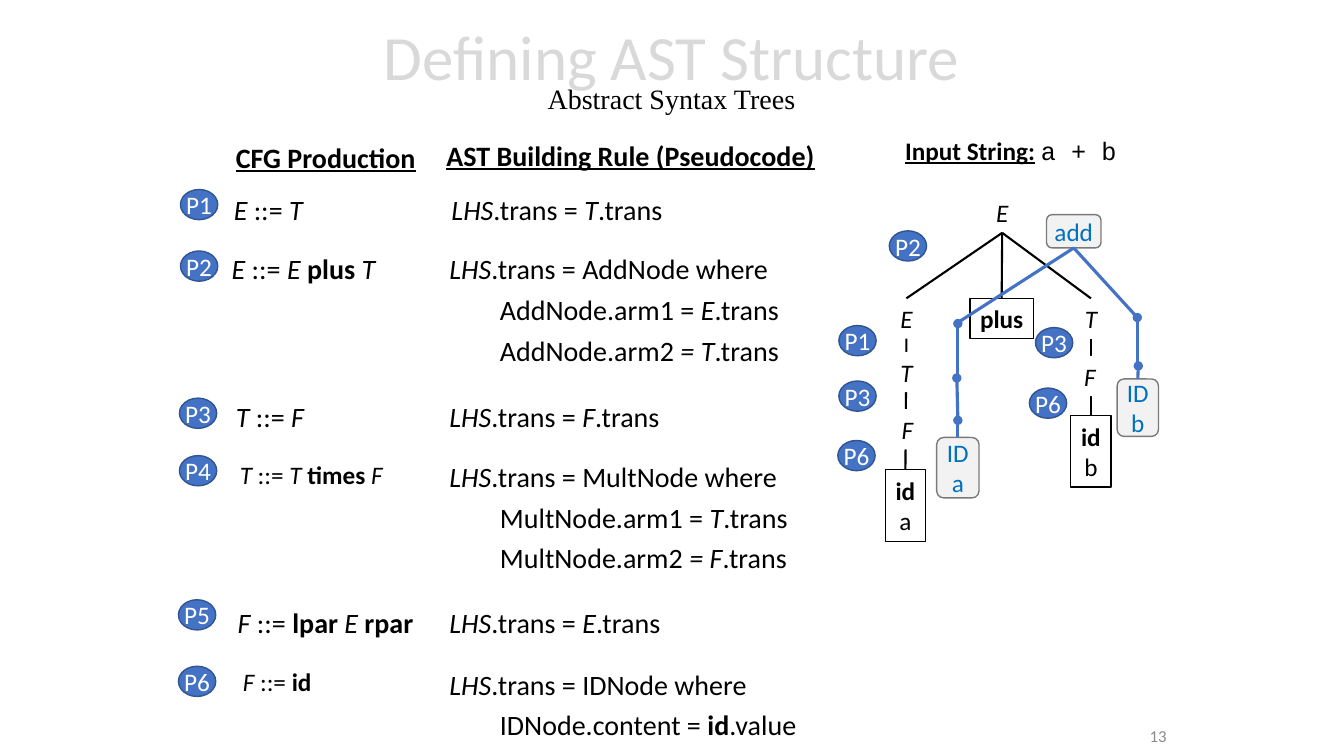
"""Build the slide that pairs grammar productions with AST building rules."""
from dataclasses import dataclass
from typing import Optional

from lxml.etree import SubElement
from pptx import Presentation
from pptx.dml.color import RGBColor
from pptx.enum.shapes import MSO_CONNECTOR as Connector, MSO_SHAPE as Preset
from pptx.enum.text import MSO_ANCHOR as Anchor, MSO_AUTO_SIZE as AutoSize, PP_ALIGN as Align
from pptx.oxml.ns import qn
from pptx.util import Inches, Pt

BLACK, WHITE, BLUE = "000000", "FFFFFF", "4472C4"
TOP, BOTTOM = 0, 2
MARKS = {
    "_": {"italic": True},
    "*": {"bold": True},
    "~": {"bold": True, "underline": True},
    "`": {"name": "Courier New"},
}


@dataclass
class Label:
    text: str
    left: float
    top: float
    width: float
    height: float = 0.51
    size: int = 20
    spacing: Optional[int] = 32
    color: str = BLACK
    align: Align = Align.LEFT
    anchor: Anchor = Anchor.TOP


@dataclass
class Style:
    preset: Preset
    fill: str
    line: Optional[str]
    color: str


@dataclass
class Node:
    text: str
    left: float
    top: float
    width: float = 0.32
    height: float = 0.4


@dataclass
class Edge:
    start: tuple
    end: tuple
    source: Optional[str] = None
    target: Optional[str] = None


SYMBOL = Style(Preset.RECTANGLE, WHITE, None, BLACK)
TOKEN = Style(Preset.RECTANGLE, WHITE, BLACK, BLACK)
TREE_NODE = Style(Preset.ROUNDED_RECTANGLE, "F2F2F2", "7A7A7A", "0070C0")
BADGE = Style(Preset.OVAL, BLUE, "325491", WHITE)

LABELS = [
    Label("~CFG Production", 2.24, 1.23, 2.2),
    Label("~AST Building Rule (Pseudocode)", 4.33, 1.21, 4),
    Label("~Input String:| |`a + b", 8.88, 1.29, 2.4, 0.4, 18, None),
    Label("_E| ::= |_T", 2.22, 1.75, 2.22),
    Label("_E |::= |_E |*plus |_T", 2.2, 2.38, 1.84, 0.48, spacing=29),
    Label("_T| ::= |_F", 2.24, 3.8, 2.22),
    Label("_T| ::= |_T |*times |_F", 2.28, 4.51, 1.7, 0.4, 18, None),
    Label("_F| ::= |*lpar |_E |*rpar", 2.26, 5.85, 2.4),
    Label("_F| ::= |*id", 2.31, 6.56, 1.2, 0.4, 18, None),
    Label("_LHS|.trans = |_T|.trans", 4.38, 1.75, 2.6),
    Label("_LHS|.trans = AddNode where\n\tAddNode.arm1 = |_E|.trans\n"
          "\tAddNode.arm2|_ = T|.trans", 4.36, 2.38, 3.56, 1.29, spacing=29),
    Label("_LHS|.trans = |_F|.trans", 4.36, 3.8, 2.6),
    Label("_LHS|.trans = MultNode where\n\tMultNode.arm1 = |_T|.trans\n"
          "\tMultNode.arm2|_ = F|.trans", 4.36, 4.44, 3.56, 1.29, spacing=29),
    Label("_LHS|.trans = |_E|.trans", 4.36, 5.85, 2.6),
    Label("_LHS|.trans = IDNode where\n\tIDNode.content = |*id|.value",
          4.36, 6.5, 3.7, 0.89, spacing=29),
    Label("13", 9.34, 7.1, 2.33, 0.4, 12, None, "8C8C8C", Align.RIGHT, Anchor.MIDDLE),
]
OUTER_SYMBOLS = {
    "root": Node("_E", 9.78, 1.91),
    "left": Node("_E", 8.83, 2.96),
    "right": Node("_T", 10.66, 2.96),
}
TOKENS = {
    "id a": Node("*id\na", 8.78, 4.66, 0.4, 0.71),
    "plus": Node("*plus", 9.62, 2.96, 0.63),
    "id b": Node("*id\nb", 10.62, 4.12, 0.4, 0.71),
}
INNER_SYMBOLS = {
    "left T": Node("_T", 8.83, 3.49),
    "left F": Node("_F", 8.84, 4.06),
    "right F": Node("_F", 10.65, 3.53),
}
AST_NODES = {
    "add": Node("add", 10.38, 2.13, 0.54, 0.33),
    "ID a": Node("ID\na", 9.29, 4.34, 0.42, 0.6),
    "ID b": Node("ID\nb", 11.08, 3.76, 0.41, 0.57),
}
PARSE_EDGES = [
    Edge((9.94, 2.31), (8.99, 2.96), "root", "left"),
    Edge((9.94, 2.31), (9.94, 2.96), "root", "plus"),
    Edge((9.94, 2.31), (10.82, 2.96), "root", "right"),
    Edge((8.99, 3.36), (8.98, 4.66), "left", "id a"),
    Edge((10.82, 3.36), (10.82, 4.12), "right", "id b"),
]
AST_EDGES = [
    Edge((11.28, 3.15), (10.65, 2.46), target="add"),
    Edge((9.5, 3.2), (10.65, 2.46), target="add"),
]
TRANSLATION_STEPS = [
    Edge((9.5, 4.34), (9.5, 4.17), "ID a"),
    Edge((9.5, 4.15), (9.49, 3.75)),
    Edge((9.5, 3.72), (9.5, 3.21)),
    Edge((11.29, 3.76), (11.29, 3.63), "ID b"),
    Edge((11.28, 3.63), (11.28, 3.15)),
]
BADGES = [
    ("P1", 1.79, 1.88), ("P2", 1.79, 2.49), ("P3", 1.78, 3.95),
    ("P4", 1.78, 4.52), ("P5", 1.77, 5.95), ("P6", 1.77, 6.61),
    ("P2", 8.82, 2.29), ("P1", 8.32, 3.23), ("P3", 8.32, 3.78),
    ("P6", 8.31, 4.37), ("P3", 10.27, 3.25), ("P6", 10.21, 3.85),
]


def rgb(value: str) -> RGBColor:
    return RGBColor.from_string(value)


def set_all(target, values: dict) -> None:
    for name, value in values.items():
        setattr(target, name, value)


def add_run(paragraph, text: str, size: int, color: str, **extra) -> None:
    run = paragraph.add_run()
    run.text = text
    set_all(run.font, {"name": "Calibri", "size": Pt(size), **extra})
    run.font.color.rgb = rgb(color)


def write_lines(frame, text: str, size: int, color: str, align: Align,
                spacing: Optional[int] = None) -> None:
    for index, line in enumerate(text.split("\n")):
        paragraph = frame.add_paragraph() if index else frame.paragraphs[0]
        paragraph.alignment = align
        if spacing:
            paragraph.line_spacing = Pt(spacing)
        if line.startswith("\t"):
            paragraph._p.get_or_add_pPr().set("marL", str(Inches(0.5)))
        for piece in line.lstrip("\t").split("|"):
            marked = piece[0] in MARKS
            add_run(paragraph, piece[1:] if marked else piece, size, color,
                    **(MARKS[piece[0]] if marked else {}))


def add_title(slide) -> None:
    title = slide.shapes.title
    set_all(title, {"left": Inches(2.35), "top": Inches(0.03),
                    "width": Inches(8.62), "height": Inches(1.45)})
    set_all(title.text_frame, {"vertical_anchor": Anchor.MIDDLE, "auto_size": AutoSize.NONE})
    paragraph = title.text_frame.paragraphs[0]
    set_all(paragraph, {"alignment": Align.CENTER, "line_spacing": 0.7})
    add_run(paragraph, "Defining AST Structure", 45, "D9D9D9")
    paragraph.add_line_break()
    add_run(paragraph, "Abstract Syntax Trees", 20, BLACK, name="Times New Roman")


def add_label(slide, label: Label) -> None:
    box = slide.shapes.add_textbox(*map(Inches, (label.left, label.top, label.width, label.height)))
    set_all(box.text_frame, {"word_wrap": True, "vertical_anchor": label.anchor})
    write_lines(box.text_frame, label.text, label.size, label.color, label.align, label.spacing)


def add_node(slide, node: Node, style: Style):
    shape = slide.shapes.add_shape(
        style.preset, *map(Inches, (node.left, node.top, node.width, node.height)))
    shape.shadow.inherit = False
    shape.fill.solid()
    shape.fill.fore_color.rgb = rgb(style.fill)
    if style.line:
        shape.line.color.rgb = rgb(style.line)
        shape.line.width = Pt(1)
    else:
        shape.line.fill.background()
    set_all(shape.text_frame, {"word_wrap": False, "vertical_anchor": Anchor.MIDDLE,
                               "margin_left": 0, "margin_right": 0,
                               "margin_top": 0, "margin_bottom": 0})
    write_lines(shape.text_frame, node.text, 18, style.color, Align.CENTER)
    return shape


def add_edge(slide, edge: Edge, shapes: dict, color: str, width: float,
             source_side: int = BOTTOM, target_side: int = TOP, dot: bool = False) -> None:
    line = slide.shapes.add_connector(Connector.STRAIGHT, *map(Inches, edge.start + edge.end))
    if edge.source:
        line.begin_connect(shapes[edge.source], source_side)
    if edge.target:
        line.end_connect(shapes[edge.target], target_side)
    line.line.color.rgb = rgb(color)
    line.line.width = Pt(width)
    if dot:
        SubElement(line.line._get_or_add_ln(), qn("a:tailEnd"), type="oval")
    SubElement(line._element.spPr, qn("a:effectLst"))


def main() -> None:
    presentation = Presentation()
    presentation.slide_width, presentation.slide_height = Inches(13.33), Inches(7.5)
    slide = presentation.slides.add_slide(presentation.slide_layouts[5])
    shapes = {}

    def add_nodes(nodes: dict, style: Style) -> None:
        shapes.update({key: add_node(slide, node, style) for key, node in nodes.items()})

    add_nodes(OUTER_SYMBOLS, SYMBOL)
    add_nodes(TOKENS, TOKEN)
    for edge in PARSE_EDGES:
        add_edge(slide, edge, shapes, BLACK, 1.5)
    add_nodes(INNER_SYMBOLS, SYMBOL)
    add_title(slide)
    add_nodes(AST_NODES, TREE_NODE)
    for edge in AST_EDGES:
        add_edge(slide, edge, shapes, BLUE, 2.25, target_side=BOTTOM)
    for edge in TRANSLATION_STEPS:
        add_edge(slide, edge, shapes, BLUE, 2.25, source_side=TOP, dot=True)
    for label in LABELS:
        add_label(slide, label)
    for text, left, top in BADGES:
        add_node(slide, Node(text, left, top, 0.37, 0.3), BADGE)
    presentation.save("out.pptx")


if __name__ == "__main__":
    main()
